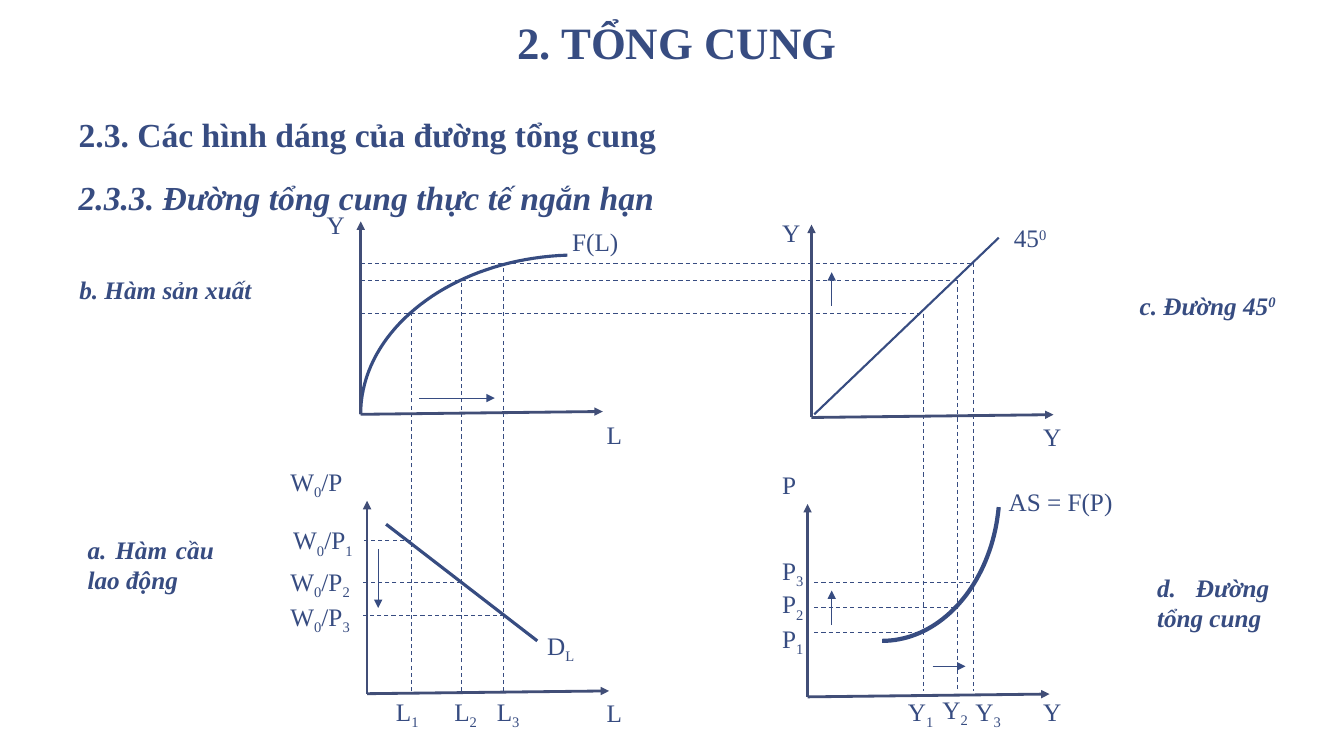
from lxml.etree import SubElement
from pptx import Presentation
from pptx.dml.color import RGBColor
from pptx.enum.dml import MSO_LINE
from pptx.enum.shapes import MSO_CONNECTOR
from pptx.enum.text import MSO_ANCHOR, MSO_AUTO_SIZE, PP_ALIGN
from pptx.oxml.ns import qn
from pptx.util import Cm, Pt

COLOURS = {"ink": "374C81", "axis": "414E77", "paper": "FFFFFF"}
SHIFTS = {"_": "-25000", "^": "30000"}


def colour(name):
    return RGBColor.from_string(COLOURS[name])


def write(paragraph, text, size=18, bold=False, italic=False, align=PP_ALIGN.LEFT, spacing=None):
    """Write text; "_" lowers and "^" raises the next character."""
    paragraph.alignment = align
    paragraph.line_spacing = spacing
    pieces, shift = [["", None]], None
    for char in text:
        if char in SHIFTS:
            shift = SHIFTS[char]
        elif shift:
            pieces += [[char, shift], ["", None]]
            shift = None
        else:
            pieces[-1][0] += char
    for piece, baseline in pieces:
        if piece:
            run = paragraph.add_run()
            run.text = piece
            run.font.name = "Times New Roman"
            run.font.size = Pt(size)
            run.font.bold, run.font.italic = bold, italic
            run.font.color.rgb = colour("ink")
            if baseline:
                run.font._element.set("baseline", baseline)


class Diagram:
    """Draws economic diagrams on one slide in a shared style."""

    def __init__(self, slide):
        self.slide = slide
        slide.background.fill.solid()
        slide.background.fill.fore_color.rgb = colour("paper")

    def place(self, holder, left, top, width, height, anchor):
        holder.left, holder.top = Cm(left), Cm(top)
        holder.width, holder.height = Cm(width), Cm(height)
        frame = holder.text_frame
        frame.auto_size = MSO_AUTO_SIZE.NONE
        frame.vertical_anchor = anchor
        frame.margin_left = frame.margin_right = Cm(0.33)
        frame.margin_top = frame.margin_bottom = Cm(0.18)
        return frame

    def title(self, text):
        frame = self.place(self.slide.shapes.title, 2.95, -0.64, 28.22, 2.54, MSO_ANCHOR.BOTTOM)
        write(frame.paragraphs[0], text, size=32, bold=True, align=PP_ALIGN.CENTER, spacing=0.85)

    def headings(self, section, subsection):
        frame = self.place(self.slide.placeholders[1], 1.65, 2.18, 28.22, 13.34, MSO_ANCHOR.TOP)
        for paragraph, text, italic in (
            (frame.paragraphs[0], section, False),
            (frame.add_paragraph(), subsection, True),
        ):
            properties = paragraph._p.get_or_add_pPr()
            properties.set("marL", "0")
            properties.set("indent", "0")
            SubElement(properties, qn("a:buNone"))
            paragraph.space_before = Pt(2 if italic else 0)
            write(paragraph, text, size=24, bold=True, italic=italic, spacing=1.5)

    def label(self, text, left, top, width=1.3, height=1.02, **style):
        box = self.slide.shapes.add_textbox(Cm(left), Cm(top), Cm(width), Cm(height))
        box.text_frame.word_wrap = True
        write(box.text_frame.paragraphs[0], text, **style)

    def line(self, start, end, width=0.75, ink="ink", dashed=False, arrow=False):
        ends = [Cm(value) for value in (*start, *end)]
        connector = self.slide.shapes.add_connector(MSO_CONNECTOR.STRAIGHT, *ends)
        connector.line.color.rgb = colour(ink)
        connector.line.width = Pt(width)
        if dashed:
            connector.line.dash_style = MSO_LINE.DASH
        if arrow:
            SubElement(connector.line._get_or_add_ln(), qn("a:tailEnd"), type="triangle")
        SubElement(connector._element.spPr, qn("a:effectLst"))

    def curve(self, controls, width, steps=40):
        points = []
        for step in range(steps + 1):
            t = step / steps
            weights = ((1 - t) ** 3, 3 * t * (1 - t) ** 2, 3 * t * t * (1 - t), t**3)
            points.append([
                Cm(sum(w * point[axis] for w, point in zip(weights, controls)))
                for axis in (0, 1)
            ])
        builder = self.slide.shapes.build_freeform(*points[0])
        builder.add_line_segments(points[1:], close=False)
        outline = builder.convert_to_shape()
        outline.fill.background()
        outline.line.color.rgb = colour("ink")
        outline.line.width = Pt(width)
        outline.shadow.inherit = False

    def axes(self, x, y):
        self.line((x, y), (x, y - 4.86), 2, "axis", arrow=True)
        self.line((x, y), (x + 6.1, y - 0.07), 2, "axis", arrow=True)


def main():
    deck = Presentation()
    deck.slide_width, deck.slide_height = Cm(33.87), Cm(19.05)
    diagram = Diagram(deck.slides.add_slide(deck.slide_layouts[1]))
    diagram.title("2. TỔNG CUNG")
    diagram.headings("2.3. Các hình dáng của đường tổng cung",
                     "2.3.3. Đường tổng cung thực tế ngắn hạn")

    diagram.line((20.52, 10.44), (25.17, 5.99), 1.5)
    diagram.line((9.73, 13.21), (13.54, 16.15), 2.25)
    diagram.curve(((14.3, 6.43), (11.38, 6.53), (9.09, 8.31), (9.09, 10.44)), 2.25)
    diagram.curve(((22.23, 16.15), (23.72, 16.15), (24.99, 14.71), (25.17, 12.78)), 3)

    base, output_axis, price_axis = 17.42, 9.09, 20.52
    equilibria = (
        (10.36, 23.27, 7.9, 13.61, 15.95),
        (11.63, 24.13, 7.06, 14.68, 15.32),
        (12.7, 24.54, 6.63, 15.52, 14.68),
    )
    for labour, income, output, wage, price in equilibria:
        for start, end in (
            ((labour, base), (labour, output)),
            ((output_axis, output), (income, output)),
            ((income, output), (income, base)),
            ((labour, wage), (output_axis, wage)),
            ((price_axis, price), (income, price)),
        ):
            diagram.line(start, end, dashed=True)

    for start, end in (
        ((20.96, 15.75), (20.96, 14.88)),
        ((23.5, 16.79), (24.33, 16.79)),
        ((20.96, 7.7), (20.96, 6.86)),
        ((10.57, 10.03), (12.47, 10.03)),
        ((9.53, 13.84), (9.53, 15.32)),
    ):
        diagram.line(start, end, arrow=True)

    for text, left, top in (
        ("Y", 7.98, 5.16), ("L", 15.04, 10.44),
        ("Y", 19.46, 5.36), ("Y", 26.04, 10.49),
        ("L", 15.04, 17.45), ("D_L", 13.54, 15.75),
        ("P", 19.46, 11.71), ("Y", 26.04, 17.42),
        ("L_1", 9.73, 17.42), ("L_2", 11.2, 17.42), ("L_3", 12.27, 17.42),
        ("Y_1", 22.63, 17.42), ("Y_2", 23.5, 17.37), ("Y_3", 24.33, 17.42),
        ("P_1", 19.46, 15.57), ("P_2", 19.46, 14.71), ("P_3", 19.46, 13.87),
    ):
        diagram.label(text, left, top)
    for text, left, top in (
        ("W_0/P", 7.07, 11.71), ("W_0/P_1", 7.14, 13.18),
        ("W_0/P_2", 7.07, 14.22), ("W_0/P_3", 7.07, 15.11),
    ):
        diagram.label(text, left, top, 2.45, 0.86, spacing=0.8)
    diagram.label("F(L)", 14.17, 5.59, 2.34)
    diagram.label("AS = F(P)", 25.17, 12.14, 3.18)
    diagram.label("45^0", 25.3, 5.49, 1.78)

    caption = {"bold": True, "italic": True}
    diagram.label("a. Hàm cầu lao động", 1.96, 13.34, 3.68, 1.8, align=PP_ALIGN.JUSTIFY, **caption)
    diagram.label("b. Hàm sản xuất", 1.75, 6.78, 6.78, **caption)
    diagram.label("c. Đường 45^0", 28.47, 7.19, 5.3, **caption)
    diagram.label("d. Đường tổng cung", 28.91, 14.3, 3.33, 1.8, align=PP_ALIGN.JUSTIFY, **caption)

    for origin in ((9.09, 10.44), (9.25, 17.48), (20.45, 10.52), (20.35, 17.56)):
        diagram.axes(*origin)
    deck.save("out.pptx")


if __name__ == "__main__":
    main()
